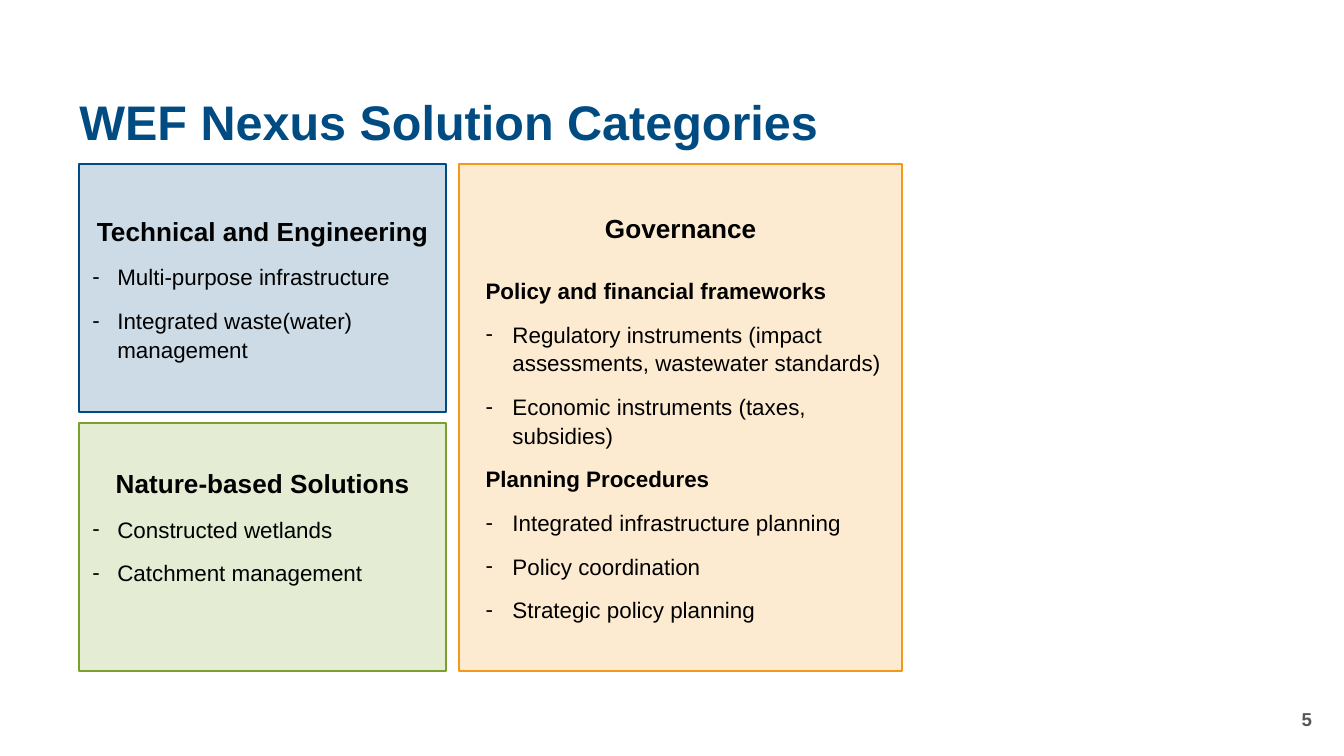
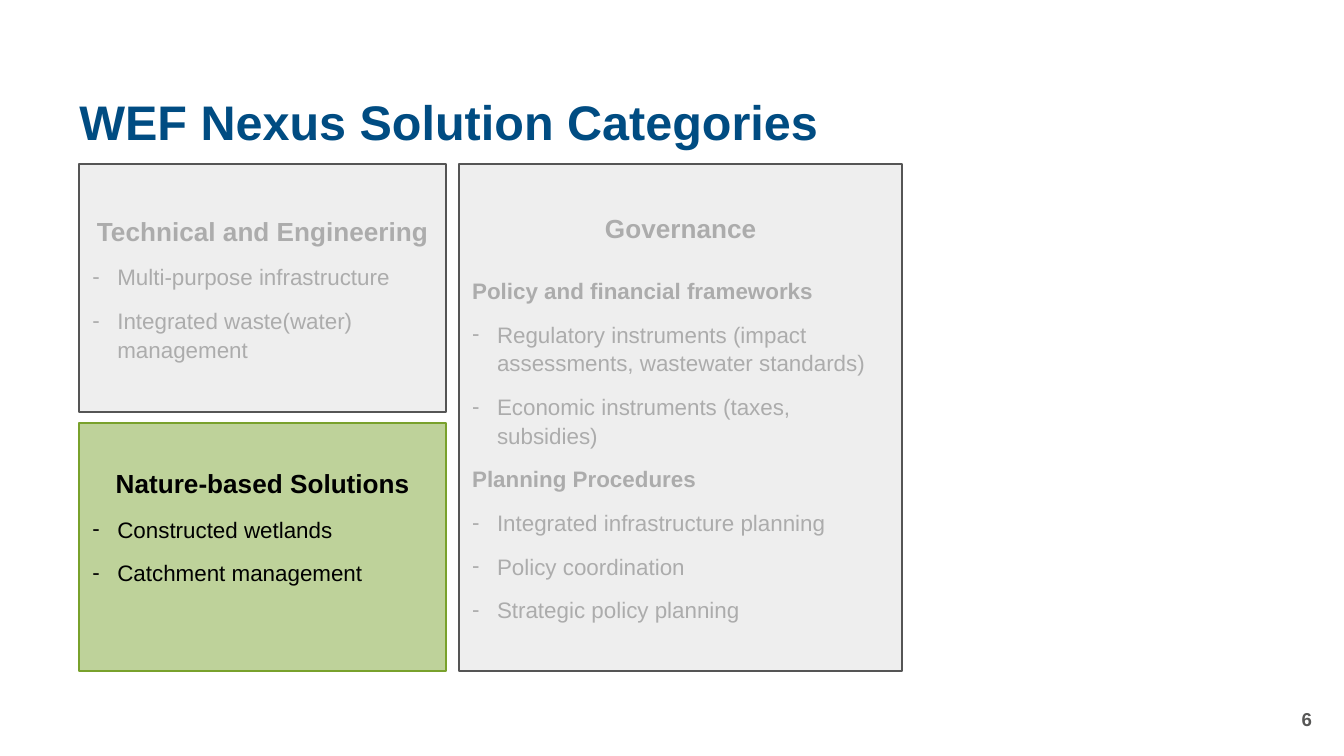
from lxml import etree
from pptx import Presentation, util as u
from pptx.dml.color import RGBColor
from pptx.enum import shapes, text
from pptx.oxml import ns

PX = 4572
FONT = "Arial"
BLUE, GREEN, ORANGE = "004C82", "79A12C", "F4971A"
BLACK, MUTED_TEXT, MUTED_FILL, MUTED_LINE = "000000", "ACACAC", "EEEEEE", "555555"
NUMBER_GREY = "575756"
TITLE = "WEF Nexus Solution Categories"
TITLE_AREA = (98, 127, 1874, 118)
NUMBER_AREA = (1522, 1040, 450, 60)
TECHNICAL_AREA = (118, 244, 546, 369)
NATURE_AREA = (118, 630, 546, 369)
GOVERNANCE_AREA = (683, 244, 660, 755)
BODY_SPACING = {"line_spacing": 1.07, "space_after": u.Pt(8)}
LEFT, CENTER, RIGHT = text.PP_ALIGN.LEFT, text.PP_ALIGN.CENTER, text.PP_ALIGN.RIGHT

TECHNICAL = [
    ("dash", "Multi-purpose infrastructure"),
    ("dash", "Integrated waste(water) management"),
]
NATURE = [
    ("dash", "Constructed wetlands"),
    ("dash", "Catchment management"),
]
GOVERNANCE = [
    ("subhead", "Policy and financial frameworks"),
    ("dash", "Regulatory instruments (impact assessments, wastewater standards)"),
    ("dash", "Economic instruments (taxes, subsidies)"),
    ("subhead", "Planning Procedures"),
    ("dash", "Integrated infrastructure planning"),
    ("dash", "Policy coordination"),
    ("dash", "Strategic policy planning"),
]


def color(value):
    """Turn a hex string into a colour."""
    return RGBColor.from_string(value)


def apply(target, values):
    """Set every attribute in a dict of format values."""
    for name, value in values.items():
        setattr(target, name, value)


def place(area):
    """Turn a px area into EMU lengths."""
    return [length * PX for length in area]


def write(para, words, size, ink, bold, layout):
    """Write one formatted run into a paragraph."""
    apply(para, layout)
    span = para.add_run()
    span.text = words
    apply(span.font, {"name": FONT, "size": u.Pt(size), "bold": bold})
    span.font.color.rgb = color(ink)


def indent(para, lead, hang=0):
    """Indent a paragraph, with a hanging dash if hang is given."""
    props = para._p.get_or_add_pPr()
    props.set("marL", str((lead + hang) * PX))
    props.set("indent", str(-hang * PX))
    if hang:
        etree.SubElement(props, ns.qn("a:buFont")).set("typeface", FONT)
        etree.SubElement(props, ns.qn("a:buChar")).set("char", "-")


def set_transparent_fill(shape, value, opacity):
    """Fill a shape with a colour at an opacity in percent."""
    shape.fill.solid()
    shape.fill.fore_color.rgb = color(value)
    if opacity < 100:
        fill = shape.element.spPr.find(ns.qn("a:solidFill"))
        alpha = etree.SubElement(fill[0], ns.qn("a:alpha"))
        alpha.set("val", str(opacity * 1000))


def add_card(page, area, heading, items, style, lead=0, hang=37,
             heading_layout=BODY_SPACING, bottom=10):
    """Add a category card with a heading and its list."""
    fill, opacity, line, ink = style
    card = page.shapes.add_shape(shapes.MSO_SHAPE.RECTANGLE, *place(area))
    card.shadow.inherit = False
    set_transparent_fill(card, fill, opacity)
    card.line.color.rgb = color(line)
    card.line.width = u.Pt(1)
    frame = card.text_frame
    apply(frame, {"word_wrap": True, "vertical_anchor": text.MSO_ANCHOR.MIDDLE,
                  "margin_bottom": bottom * PX})
    write(frame.paragraphs[0], heading, 14, ink, True,
          {"alignment": CENTER, **heading_layout})
    for kind, words in items:
        para = frame.add_paragraph()
        indent(para, lead, hang if kind == "dash" else 0)
        write(para, words, 12, ink, kind == "subhead",
              {"alignment": LEFT, **BODY_SPACING})


def add_title(page):
    """Move and format the title placeholder."""
    box = page.shapes.title
    apply(box, dict(zip(("left", "top", "width", "height"), place(TITLE_AREA))))
    apply(box.text_frame, {"word_wrap": True, "auto_size": text.MSO_AUTO_SIZE.NONE,
                           "vertical_anchor": text.MSO_ANCHOR.MIDDLE})
    write(box.text_frame.paragraphs[0], TITLE, 26, BLUE, True,
          {"alignment": LEFT, "line_spacing": 0.9})


def add_number(page, number):
    """Add the page number at the lower right."""
    box = page.shapes.add_textbox(*place(NUMBER_AREA))
    apply(box.text_frame, {"word_wrap": True,
                           "vertical_anchor": text.MSO_ANCHOR.MIDDLE})
    write(box.text_frame.paragraphs[0], str(number), 10, NUMBER_GREY, True,
          {"alignment": RIGHT})


def add_categories_page(deck, number, technical, nature, governance, lead, hang):
    """Add a page with the three category cards in the given styles."""
    page = deck.slides.add_slide(deck.slide_layouts[5])
    add_title(page)
    add_card(page, GOVERNANCE_AREA, "Governance", GOVERNANCE, governance,
             lead, hang, {"space_after": u.Pt(17)})
    add_number(page, number)
    add_card(page, TECHNICAL_AREA, "Technical and Engineering", TECHNICAL, technical)
    add_card(page, NATURE_AREA, "Nature-based Solutions", NATURE, nature, bottom=74)


def tint(value, opacity):
    """Return the style of a card in a transparent colour."""
    return value, opacity, value, BLACK


def main():
    """Build and save the deck."""
    deck = Presentation()
    apply(deck, {"slide_width": 2000 * PX, "slide_height": 1125 * PX})
    muted = (MUTED_FILL, 100, MUTED_LINE, MUTED_TEXT)
    add_categories_page(deck, 5, tint(BLUE, 20), tint(GREEN, 20), tint(ORANGE, 20),
                        lead=20, hang=40)
    add_categories_page(deck, 6, muted, tint(GREEN, 48), muted, lead=0, hang=37)
    deck.save("out.pptx")


if __name__ == "__main__":
    main()
